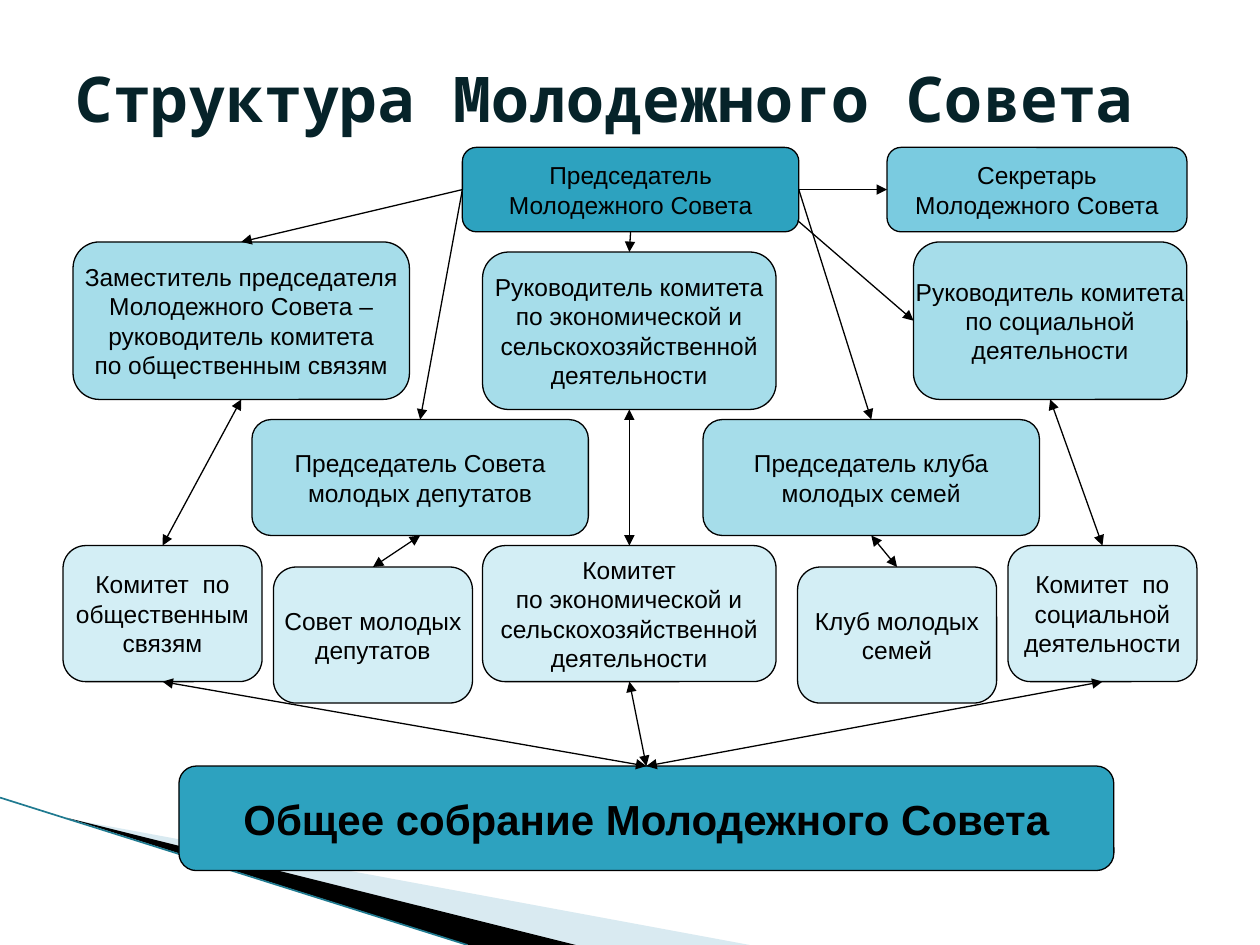
import pptx
import pptx.dml.color
import pptx.enum.shapes
import pptx.enum.text
import pptx.oxml.ns
import pptx.oxml.xmlchemy
import pptx.util
from pptx.util import Inches

DARK, MID, LIGHT, PALE = "2DA2BF", "7ACBE0", "A6DDEA", "D3EEF5"
BLACK = "000000"
TOP, LEFT, BASE, RIGHT = range(4)

HEADS = {
    "chair": (3.67, 1.17, 2.67, 0.67, DARK, "Председатель\nМолодежного Совета"),
    "clerk": (7.04, 1.17, 2.38, 0.67, MID, "Секретарь\nМолодежного Совета"),
    "vice": (0.58, 1.92, 2.67, 1.25, LIGHT,
             "Заместитель председателя\nМолодежного Совета –\n"
             "руководитель комитета\nпо общественным связям"),
    "farm": (3.83, 2, 2.33, 1.25, LIGHT,
             "Руководитель комитета\nпо экономической и\n"
             "сельскохозяйственной\nдеятельности"),
    "social": (7.25, 1.92, 2.17, 1.25, LIGHT,
               "Руководитель комитета\nпо социальной\nдеятельности"),
    "vice team": (0.5, 4.33, 1.58, 1.08, PALE, "Комитет  по\nобщественным\nсвязям"),
    "farm team": (3.83, 4.33, 2.33, 1.08, PALE,
                  "Комитет\nпо экономической и\nсельскохозяйственной\nдеятельности"),
    "social team": (8, 4.33, 1.5, 1.08, PALE, "Комитет  по\nсоциальной\nдеятельности"),
    "all": (1.42, 6.08, 7.42, 0.83, DARK, "Общее собрание Молодежного Совета"),
}
CLUBS = {
    "youth": (2, 3.33, 2.67, 0.92, LIGHT, "Председатель Совета\nмолодых депутатов"),
    "home": (5.58, 3.33, 2.67, 0.92, LIGHT, "Председатель клуба\nмолодых семей"),
    "youth team": (2.17, 4.5, 1.58, 1.08, PALE, "Совет молодых\nдепутатов"),
    "home team": (6.33, 4.5, 1.58, 1.08, PALE, "Клуб молодых\nсемей"),
}
HEAD_LINKS = [
    ("chair", LEFT, "vice", TOP, False),
    ("chair", RIGHT, "clerk", LEFT, False),
    ("chair", BASE, "farm", TOP, False),
    ("vice team", TOP, "vice", BASE, True),
    ("farm team", TOP, "farm", BASE, True),
    ("social team", TOP, "social", BASE, True),
    ("all", TOP, "vice team", BASE, True),
    ("all", TOP, "farm team", BASE, True),
    ("all", TOP, "social team", BASE, True),
]
CLUB_LINKS = [
    ("chair", LEFT, "youth", TOP, False),
    ("chair", RIGHT, "home", TOP, False),
    ("youth team", TOP, "youth", BASE, True),
    ("home team", TOP, "home", BASE, True),
]


def tint(code):
    """Return the colour for a hex string."""
    return pptx.dml.color.RGBColor.from_string(code)


def add_tag(host, name, **keys):
    """Append a drawing element with the given attributes."""
    tag = pptx.oxml.xmlchemy.OxmlElement(name)
    for key, value in keys.items():
        tag.set(key, value)
    host.append(tag)


def set_text(shape, text, size, font, code, bold=False):
    """Put text in a shape and format every run."""
    frame = shape.text_frame
    frame.text = text
    frame.vertical_anchor = pptx.enum.text.MSO_ANCHOR.MIDDLE
    for line in frame.paragraphs:
        for run in line.runs:
            run.font.size = pptx.util.Pt(size)
            run.font.name = font
            run.font.bold = bold
            run.font.color.rgb = tint(code)
    return frame


def add_title(slide, text):
    """Add the slide heading."""
    box = slide.shapes.add_textbox(Inches(0.5), Inches(0.4), Inches(8.83), Inches(0.75))
    set_text(box, text, 36, "Noto Sans Mono", "062329", True).word_wrap = True


def add_box(slide, left, top, width, height, code, text, size=14, bold=False):
    """Add a rounded box with centred text."""
    box = slide.shapes.add_shape(
        pptx.enum.shapes.MSO_SHAPE.ROUNDED_RECTANGLE,
        Inches(left), Inches(top), Inches(width), Inches(height))
    box.shadow.inherit = False
    box.fill.solid()
    box.fill.fore_color.rgb = tint(code)
    box.line.color.rgb = tint(BLACK)
    box.line.width = pptx.util.Pt(0.75)
    frame = set_text(box, text, size, "Arial", BLACK, bold)
    frame.word_wrap = False
    for line in frame.paragraphs:
        line.alignment = pptx.enum.text.PP_ALIGN.CENTER
    return box


def add_line(slide, start, end, code=BLACK, width=0.75):
    """Add a straight line between two points in inches."""
    line = slide.shapes.add_connector(
        pptx.enum.shapes.MSO_CONNECTOR.STRAIGHT,
        *(Inches(value) for value in (*start, *end)))
    line.line.color.rgb = tint(code)
    line.line.width = pptx.util.Pt(width)
    add_tag(line._element.spPr, "a:effectLst")
    return line


def add_tips(line, both):
    """Put an arrowhead on the end, or on both ends, of a line."""
    stroke = line._element.spPr.find(pptx.oxml.ns.qn("a:ln"))
    if both:
        add_tag(stroke, "a:headEnd", type="triangle")
    add_tag(stroke, "a:tailEnd", type="triangle")


def add_links(slide, boxes, links):
    """Join pairs of boxes with glued arrows."""
    for source, out, target, entry, both in links:
        line = add_line(slide, (0, 0), (1, 1))
        line.begin_connect(boxes[source], out)
        line.end_connect(boxes[target], entry)
        add_tips(line, both)


def add_wedge(slide, points, code, alpha=100):
    """Add a filled outline without a border."""
    spots = [(Inches(x), Inches(y)) for x, y in points]
    form = slide.shapes.build_freeform(*spots[0])
    form.add_line_segments(spots[1:], close=True)
    wedge = form.convert_to_shape()
    wedge.shadow.inherit = False
    wedge.fill.solid()
    wedge.fill.fore_color.rgb = tint(code)
    wedge.line.fill.background()
    if alpha < 100:
        shade = wedge._element.spPr.find(".//" + pptx.oxml.ns.qn("a:srgbClr"))
        add_tag(shade, "a:alpha", val=str(alpha * 1000))


def add_decor(slide):
    """Draw the sweep in the lower left corner."""
    add_wedge(slide, [(0.55, 6.5), (5.95, 7.5), (4.56, 7.5)], "A0CBDC", 40)
    add_wedge(slide, [(0.53, 6.49), (4.57, 7.5), (3.72, 7.5)], BLACK)
    add_line(slide, (0, 6.33), (3.71, 7.5), "1F7A90", 0.95)


def main():
    """Build and save the slide."""
    deck = pptx.Presentation()
    deck.slide_width, deck.slide_height = Inches(10), Inches(7.5)
    slide = deck.slides.add_slide(deck.slide_layouts[6])
    add_decor(slide)
    add_title(slide, "Структура Молодежного Совета")
    boxes = {}
    for name, data in HEADS.items():
        style = (24, True) if name == "all" else ()
        boxes[name] = add_box(slide, *data, *style)
    add_links(slide, boxes, HEAD_LINKS)
    side = add_line(slide, (6.33, 1.75), (7.25, 2.54))
    side.end_connect(boxes["social"], LEFT)
    add_tips(side, False)
    for name, data in CLUBS.items():
        boxes[name] = add_box(slide, *data)
    add_links(slide, boxes, CLUB_LINKS)
    deck.save("out.pptx")


if __name__ == "__main__":
    main()
